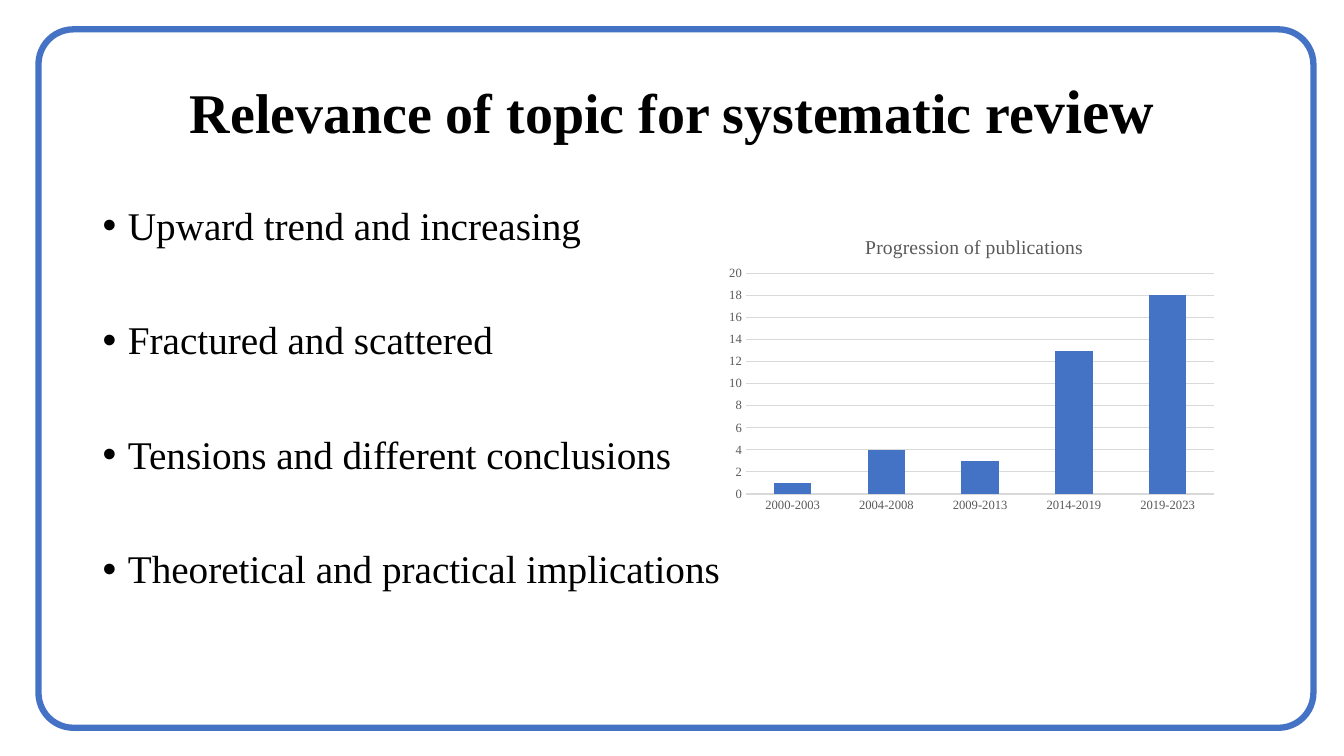
from lxml.etree import SubElement
from pptx import Presentation
from pptx.chart.data import CategoryChartData
from pptx.dml.color import RGBColor
from pptx.enum.chart import XL_CHART_TYPE, XL_TICK_MARK
from pptx.enum.shapes import MSO_SHAPE
from pptx.enum.text import MSO_ANCHOR, MSO_AUTO_SIZE, PP_ALIGN
from pptx.oxml.ns import qn
from pptx.util import Cm, Pt

COLORS = {"accent": "4472C4", "text": "000000", "muted": "595959", "grid": "D9D9D9"}
FONT = "Times New Roman"

FRAME_BOX = (0.97, 0.74, 32.13, 17.6)
TITLE_BOX = (2.33, 1.02, 29.21, 3.68)
POINTS_BOX = (2.33, 5.08, 29.21, 12.09)
CHART_BOX = (18.16, 5.44, 12.7, 7.62)

TITLE_RUNS = [("Relevance of topic for systematic re", 40), ("view", 44)]
POINTS = [
    "Upward trend and increasing",
    "Fractured and scattered",
    "Tensions and different conclusions",
    "Theoretical and practical implications",
]
PUBLICATIONS = {
    "2000-2003": 1,
    "2004-2008": 4,
    "2009-2013": 3,
    "2014-2019": 13,
    "2019-2023": 18,
}


def color(name):
    return RGBColor.from_string(COLORS[name])


def apply_format(target, values):
    for name, value in values.items():
        setattr(target, name, value)


def place(shape, box):
    lengths = (Cm(length) for length in box)
    apply_format(shape, dict(zip(("left", "top", "width", "height"), lengths)))


def format_font(font, size, color_name="text", bold=False):
    apply_format(font, {"name": FONT, "size": Pt(size), "bold": bold})
    font.color.rgb = color(color_name)


def add_frame(slide, box):
    frame = slide.shapes.add_shape(MSO_SHAPE.ROUNDED_RECTANGLE, *map(Cm, box))
    frame.adjustments[0] = 0.05
    frame.shadow.inherit = False
    frame.fill.background()
    frame.line.color.rgb = color("accent")
    frame.line.width = Pt(4.5)
    slide.shapes[0].element.addprevious(frame.element)


def fill_title(slide, box):
    title = slide.shapes.title
    place(title, box)
    apply_format(title.text_frame, {
        "vertical_anchor": MSO_ANCHOR.MIDDLE, "auto_size": MSO_AUTO_SIZE.NONE})
    paragraph = title.text_frame.paragraphs[0]
    apply_format(paragraph, {"alignment": PP_ALIGN.CENTER, "line_spacing": 0.9})
    for text, size in TITLE_RUNS:
        run = paragraph.add_run()
        run.text = text
        format_font(run.font, size, bold=True)


def fill_points(slide, box):
    body = slide.placeholders[1]
    place(body, box)
    text_frame = body.text_frame
    text_frame.text = "\n".join(POINTS)
    text_frame.auto_size = MSO_AUTO_SIZE.NONE
    for index, paragraph in enumerate(text_frame.paragraphs):
        space = Pt(51.5) if index else Pt(10)
        apply_format(paragraph, {"line_spacing": 0.9, "space_before": space})
        format_font(paragraph.runs[0].font, 28)
        properties = paragraph._p.get_or_add_pPr()
        properties.set("marL", str(Cm(0.64)))
        properties.set("indent", str(-Cm(0.64)))
        SubElement(properties, qn("a:buFont"), typeface="Arial")
        SubElement(properties, qn("a:buChar"), char="•")


def set_chart_layout(element, position, fractions):
    """Place a chart part at fractions of the chart's width and height."""
    for old_layout in element.findall(qn("c:layout")):
        element.remove(old_layout)
    layout = SubElement(element, qn("c:layout"))
    element.insert(position, layout)
    manual = SubElement(layout, qn("c:manualLayout"))
    for name, value in fractions.items():
        SubElement(manual, qn(f"c:{name}"), val=str(value))


def format_axes(chart):
    for axis in (chart.category_axis, chart.value_axis):
        apply_format(axis, {"major_tick_mark": XL_TICK_MARK.NONE,
                            "minor_tick_mark": XL_TICK_MARK.NONE})
        format_font(axis.tick_labels.font, 9, "muted")
        axis.format.line.fill.background()
    value_axis = chart.value_axis
    apply_format(value_axis, {"minimum_scale": 0, "maximum_scale": 20, "major_unit": 2})
    grid_line = value_axis.major_gridlines.format.line
    grid_line.color.rgb = color("grid")
    grid_line.width = Pt(0.75)


def add_publications_chart(slide, box):
    data = CategoryChartData()
    data.categories = list(PUBLICATIONS)
    data.add_series("Series 1", list(PUBLICATIONS.values()))
    chart = slide.shapes.add_chart(
        XL_CHART_TYPE.COLUMN_CLUSTERED, *map(Cm, box), data).chart
    apply_format(chart, {"has_legend": False, "has_title": True})
    format_font(chart.font, 10)
    title = chart.chart_title
    title.text_frame.text = "Progression of publications"
    format_font(title.text_frame.paragraphs[0].runs[0].font, 14, "muted")
    format_axes(chart)

    plot = chart.plots[0]
    apply_format(plot, {"gap_width": 150, "vary_by_categories": False})
    fill = plot.series[0].format.fill
    fill.solid()
    fill.fore_color.rgb = color("accent")

    edges = {"xMode": "edge", "yMode": "edge"}
    set_chart_layout(title._element, 1, {**edges, "x": 0.28, "y": 0.05})
    plot_area = chart._chartSpace.find(f".//{qn('c:plotArea')}")
    set_chart_layout(plot_area, 0, {"layoutTarget": "inner", **edges,
                                    "x": 0.05, "y": 0.19, "w": 0.93, "h": 0.73})


def build_relevance_slide(presentation):
    slide = presentation.slides.add_slide(presentation.slide_layouts[1])
    add_frame(slide, FRAME_BOX)
    fill_title(slide, TITLE_BOX)
    fill_points(slide, POINTS_BOX)
    add_publications_chart(slide, CHART_BOX)


def main():
    presentation = Presentation()
    apply_format(presentation, {"slide_width": Cm(33.87), "slide_height": Cm(19.05)})
    build_relevance_slide(presentation)
    presentation.save("out.pptx")


if __name__ == "__main__":
    main()
